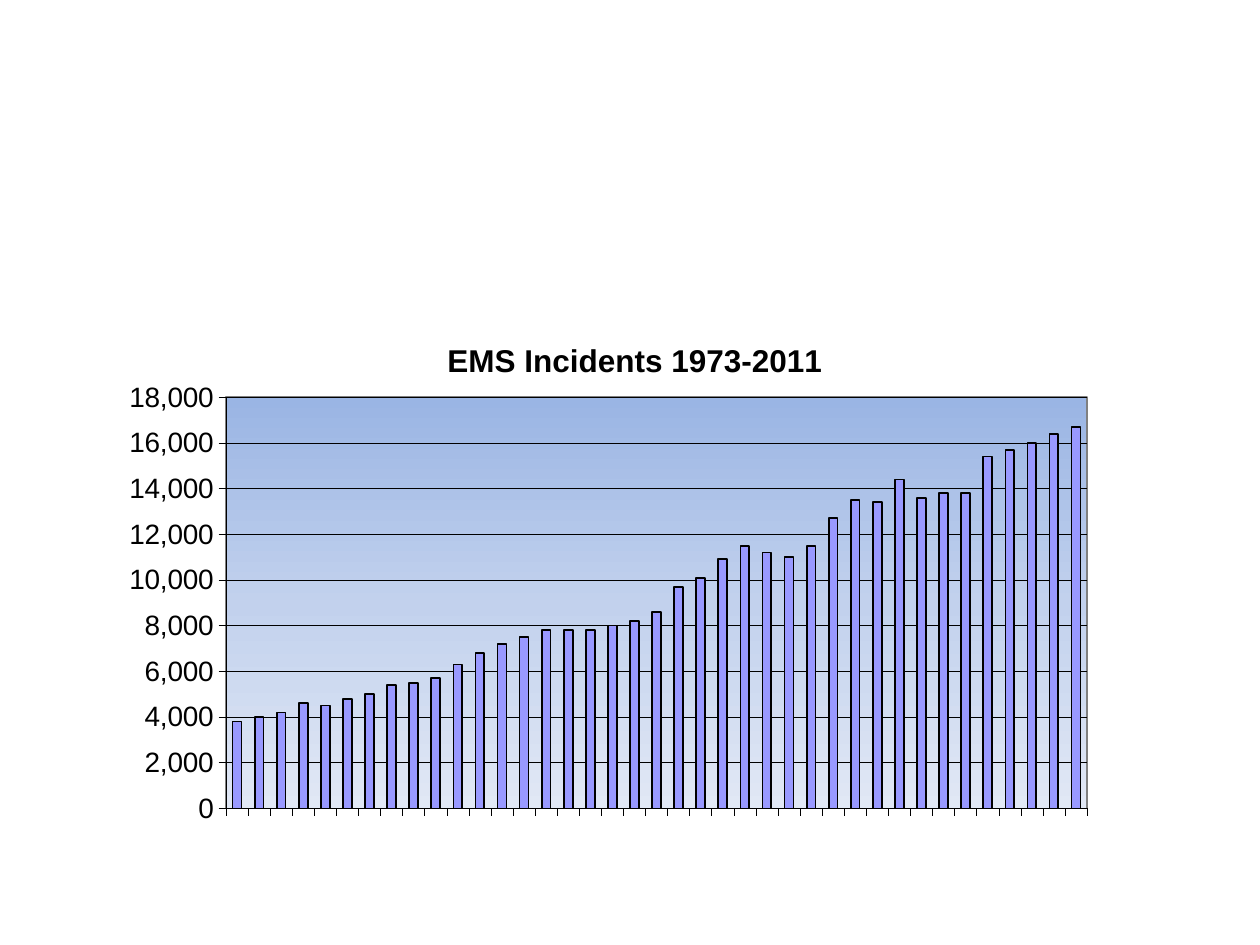
import pptx
import pptx.chart.data
import pptx.dml.color
import pptx.enum.chart
import pptx.oxml
import pptx.oxml.ns
import pptx.util

RGB = pptx.dml.color.RGBColor
BLACK = RGB(0, 0, 0)
LILAC = RGB(0x99, 0x99, 0xFF)
SHADES = [(0, RGB(0x9A, 0xB5, 0xE4)), (50, RGB(0xC2, 0xD1, 0xED)), (100, RGB(0xE1, 0xE8, 0xF5))]

YEARS = [str(year) for year in range(1973, 2012)]
COUNTS = [
    3800, 4000, 4200, 4600, 4500, 4800, 5000, 5400, 5500, 5700,
    6300, 6800, 7200, 7500, 7800, 7800, 7800, 8000, 8200, 8600,
    9700, 10100, 10900, 11500, 11200, 11000, 11500, 12700, 13500, 13400,
    14400, 13600, 13800, 13800, 15400, 15700, 16000, 16400, 16700,
]


class Deck:
    """Holds the style and the current slide."""

    def __init__(self, face):
        self.face = face
        self.show = pptx.Presentation()
        self.show.slide_width = pptx.util.Cm(25.4)
        self.show.slide_height = pptx.util.Cm(19.05)
        self.slide = self.show.slides.add_slide(self.show.slide_layouts[6])

    def font(self, font, size, bold=False):
        font.name = self.face
        font.size = pptx.util.Pt(size)
        font.bold = bold
        font.color.rgb = BLACK

    def line(self, line, width):
        line.color.rgb = BLACK
        line.width = pptx.util.Pt(width)

    def layout(self, inner="", **spots):
        target = f'<c:layoutTarget val="{inner}"/>' if inner else ""
        modes = "".join(f'<c:{key}Mode val="edge"/>' for key in "xy")
        sizes = "".join(f'<c:{key} val="{val}"/>' for key, val in spots.items())
        return pptx.oxml.parse_xml(
            f'<c:layout {pptx.oxml.ns.nsdecls("c")}><c:manualLayout>'
            f"{target}{modes}{sizes}</c:manualLayout></c:layout>"
        )

    def axis(self, axis):
        axis.major_tick_mark = pptx.enum.chart.XL_TICK_MARK.OUTSIDE
        axis.minor_tick_mark = pptx.enum.chart.XL_TICK_MARK.NONE
        self.font(axis.tick_labels.font, 16)
        self.line(axis.format.line, 0.25)

    def title(self, chart, text):
        frame = chart.chart_title.text_frame
        frame.text = text
        self.font(frame.paragraphs[0].font, 18, True)
        title = chart.element.xpath("c:chart/c:title")[0]
        for old in title.xpath("c:layout"):
            title.remove(old)
        title.xpath("c:tx")[0].addnext(self.layout(x=0.32, y=0.05))

    def plot(self, chart):
        area = chart.element.xpath("c:chart/c:plotArea")[0]
        for old in area.xpath("c:layout"):
            area.remove(old)
        area.insert(0, self.layout("inner", x=0.108, y=0.158, w=0.846, h=0.705))
        stops = "".join(
            f'<a:gs pos="{spot * 1000}"><a:srgbClr val="{shade}"/></a:gs>'
            for spot, shade in SHADES
        )
        area.append(pptx.oxml.parse_xml(
            f'<c:spPr {pptx.oxml.ns.nsdecls("c", "a")}><a:gradFill><a:gsLst>{stops}</a:gsLst>'
            '<a:lin ang="5400000" scaled="0"/></a:gradFill>'
            '<a:ln w="12700"><a:solidFill><a:srgbClr val="808080"/></a:solidFill></a:ln></c:spPr>'
        ))

    def chart(self, title, cats, vals, left, top, width, height):
        data = pptx.chart.data.CategoryChartData(number_format="#,##0")
        data.categories = cats
        data.add_series("Series 1", vals)
        box = map(pptx.util.Cm, (left, top, width, height))
        kind = pptx.enum.chart.XL_CHART_TYPE.COLUMN_CLUSTERED
        chart = self.slide.shapes.add_chart(kind, *box, data).chart
        self.font(chart.font, 15.5)
        chart.has_legend = False
        self.title(chart, title)
        self.axis(chart.category_axis)
        chart.category_axis.tick_label_position = pptx.enum.chart.XL_TICK_LABEL_POSITION.NONE
        scale = chart.value_axis
        self.axis(scale)
        scale.minimum_scale, scale.maximum_scale, scale.major_unit = 0, 18000, 2000
        scale.tick_labels.number_format = "#,##0"
        scale.tick_labels.number_format_is_linked = False
        self.line(scale.major_gridlines.format.line, 0.25)
        bars = chart.plots[0]
        bars.gap_width = 150
        bars.vary_by_categories = False
        form = bars.series[0].format
        form.fill.solid()
        form.fill.fore_color.rgb = LILAC
        self.line(form.line, 1)
        self.plot(chart)


def main():
    deck = Deck("Arial")
    deck.chart("EMS Incidents 1973-2011", YEARS, COUNTS, 2.34, 6.15, 20.52, 11.76)
    deck.show.save("out.pptx")


if __name__ == "__main__":
    main()
